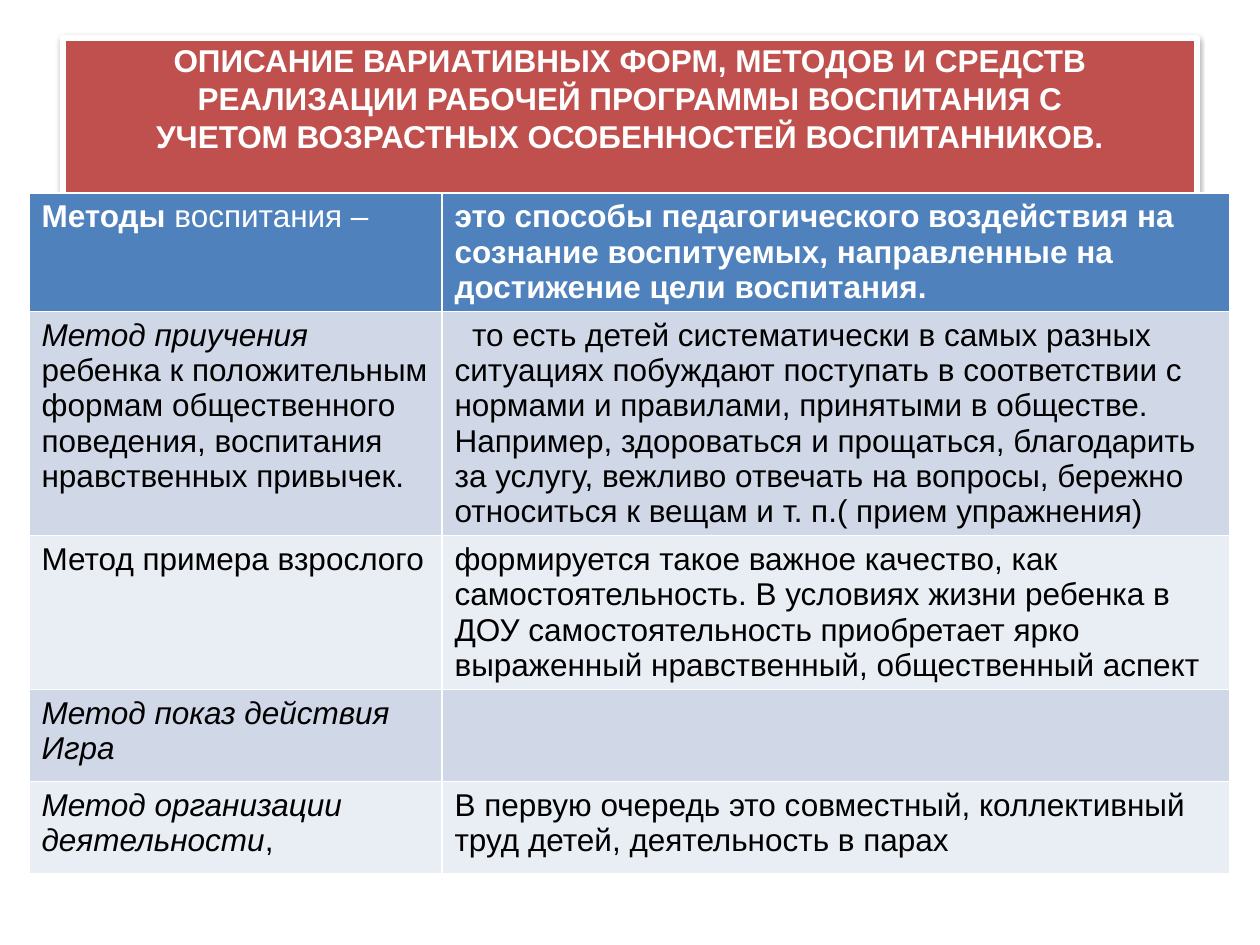
from dataclasses import dataclass

from lxml.etree import SubElement
from pptx import Presentation
from pptx.dml.color import RGBColor
from pptx.enum.shapes import MSO_SHAPE
from pptx.enum.text import MSO_ANCHOR, PP_ALIGN
from pptx.oxml.ns import qn
from pptx.util import Emu, Pt

PX_PER_INCH = 126
WHITE, BLACK, RED = "FFFFFF", "000000", "C0504D"
HEADER, BAND_DARK, BAND_LIGHT = "4F81BD", "D0D8E8", "E9EDF4"
ROW_HEIGHT = 92
COLUMN_WIDTHS = (413, 788)


@dataclass(frozen=True)
class Piece:
    text: str
    bold: bool = False
    italic: bool = False


# A cell is a list of paragraphs, a paragraph is a list of pieces
Cell = list[list[Piece]]

TITLE: Cell = [[Piece(
    "ОПИСАНИЕ ВАРИАТИВНЫХ ФОРМ, МЕТОДОВ И СРЕДСТВ РЕАЛИЗАЦИИ РАБОЧЕЙ ПРОГРАММЫ ВОСПИТАНИЯ С\v"
    "УЧЕТОМ ВОЗРАСТНЫХ ОСОБЕННОСТЕЙ ВОСПИТАННИКОВ.\v", bold=True)]]

ROWS: list[tuple[Cell, Cell]] = [
    ([[Piece("Методы ", bold=True), Piece("воспитания –")]],
     [[Piece("это способы педагогического воздействия на сознание воспитуемых, "
             "направленные на достижение цели воспитания.", bold=True)]]),
    ([[Piece("Метод приучения ", italic=True),
       Piece("ребенка к положительным формам общественного поведения, "
             "воспитания нравственных привычек. ")]],
     [[Piece("  то есть детей систематически в самых разных ситуациях побуждают поступать "
             "в соответствии с нормами и правилами, принятыми в обществе. Например, "
             "здороваться и прощаться, благодарить за услугу, вежливо отвечать на вопросы, "
             "бережно относиться к вещам и т. п.( прием упражнения)")]]),
    ([[Piece("Метод примера взрослого")]],
     [[Piece("формируется такое важное качество, как самостоятельность. В условиях жизни "
             "ребенка в ДОУ самостоятельность приобретает ярко выраженный нравственный, "
             "общественный аспект")]]),
    ([[Piece("Метод показ действия", italic=True)], [Piece("Игра", italic=True)]],
     []),
    ([[Piece("Метод организации деятельности", italic=True), Piece(",")]],
     [[Piece("В первую очередь это совместный, коллективный труд детей, "
             "деятельность в парах")]]),
]


def px(length: int) -> Emu:
    return Emu(round(length * 914400 / PX_PER_INCH))


def color(value: str) -> RGBColor:
    return RGBColor.from_string(value)


def write_text(frame, paragraphs: Cell, *, ink: str, size: int = 18, font: str = "Arial",
               align=PP_ALIGN.LEFT, spacing: float = 1.0) -> None:
    for index, pieces in enumerate(paragraphs):
        para = frame.add_paragraph() if index else frame.paragraphs[0]
        para.alignment = align
        para.line_spacing = spacing
        para.font.size = Pt(size)
        for piece in pieces:
            # A vertical tab in the text marks a line break
            for number, line in enumerate(piece.text.split("\v")):
                if number:
                    para.add_line_break()
                if not line:
                    continue
                span = para.add_run()
                span.text = line
                span.font.name = font
                span.font.size = Pt(size)
                span.font.bold = piece.bold
                span.font.italic = piece.italic
                span.font.color.rgb = color(ink)


def add_shadow(shape) -> None:
    shape.shadow.inherit = False
    effects = shape._element.spPr.find(qn("a:effectLst"))
    outer = SubElement(effects, qn("a:outerShdw"), blurRad=str(Pt(3.1)), dist=str(Pt(1.6)),
                       dir="5400000", rotWithShape="0")
    tint = SubElement(outer, qn("a:srgbClr"), val=BLACK)
    SubElement(tint, qn("a:alpha"), val="38000")


def add_title(page) -> None:
    box = page.shapes.add_shape(MSO_SHAPE.RECTANGLE, px(63), px(38), px(1134), px(157))
    box.fill.solid()
    box.fill.fore_color.rgb = color(RED)
    box.line.color.rgb = color(WHITE)
    box.line.width = Pt(3)
    add_shadow(box)
    frame = box.text_frame
    frame.word_wrap = True
    frame.vertical_anchor = MSO_ANCHOR.MIDDLE
    frame.margin_left = frame.margin_right = frame.margin_top = frame.margin_bottom = 0
    write_text(frame, TITLE, ink=WHITE, align=PP_ALIGN.CENTER)


def add_methods_table(page) -> None:
    table = page.shapes.add_table(len(ROWS), len(COLUMN_WIDTHS), px(29), px(193),
                                  px(sum(COLUMN_WIDTHS)), px(ROW_HEIGHT * len(ROWS))).table
    for column, width in zip(table.columns, COLUMN_WIDTHS):
        column.width = px(width)
    for row_index, contents in enumerate(ROWS):
        band = BAND_DARK if row_index % 2 else BAND_LIGHT
        for column_index, paragraphs in enumerate(contents):
            cell = table.cell(row_index, column_index)
            cell.fill.solid()
            cell.fill.fore_color.rgb = color(band if row_index else HEADER)
            write_text(cell.text_frame, paragraphs, ink=BLACK if row_index else WHITE)


def main() -> None:
    deck = Presentation()
    deck.slide_width, deck.slide_height = px(1260), px(945)
    page = deck.slides.add_slide(deck.slide_layouts[6])
    add_title(page)
    add_methods_table(page)
    deck.save("out.pptx")


if __name__ == "__main__":
    main()
